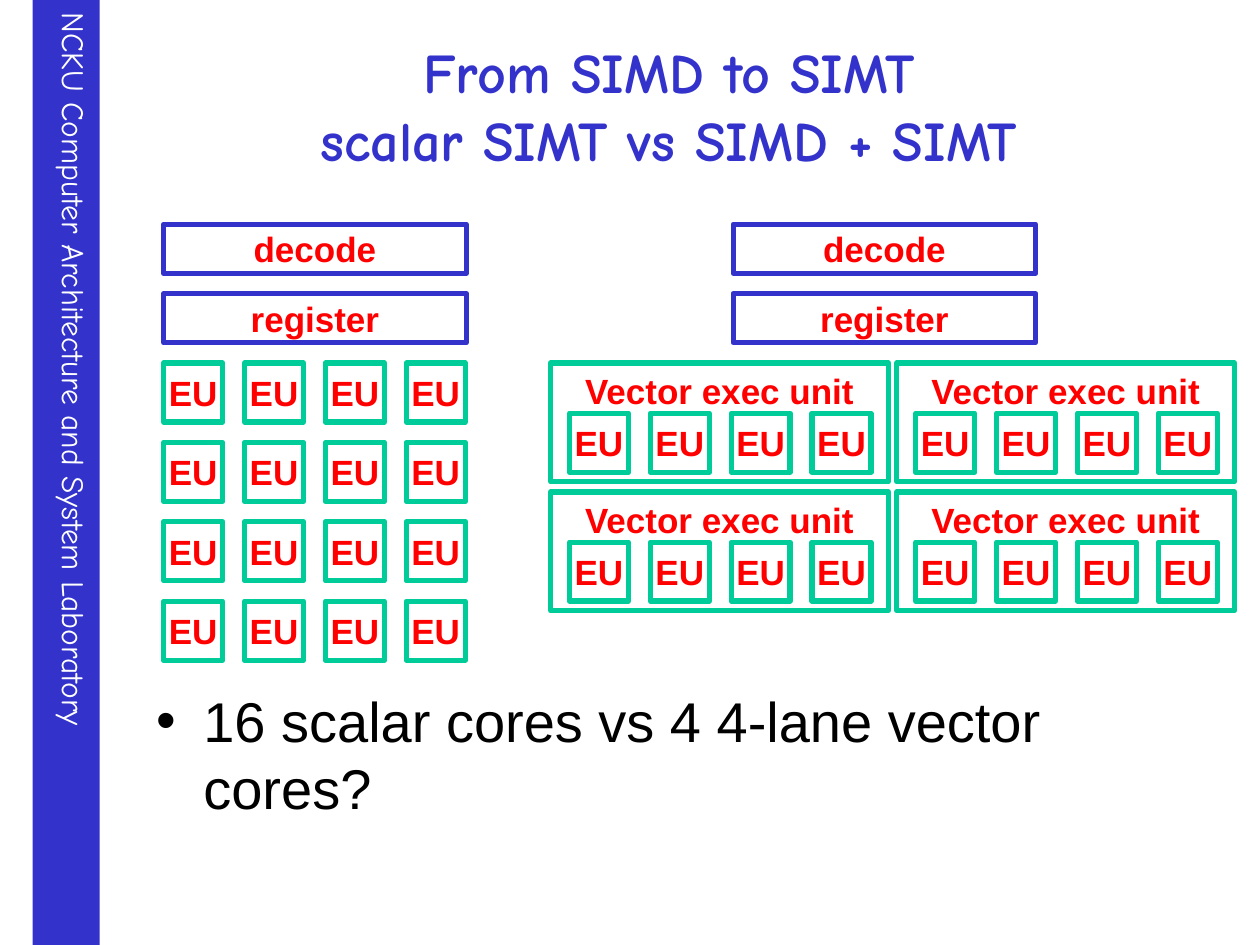
from pptx import Presentation
from pptx.dml.color import RGBColor
from pptx.enum.shapes import MSO_SHAPE
from pptx.enum.text import MSO_ANCHOR, MSO_AUTO_SIZE, PP_ALIGN
from pptx.oxml import parse_xml
from pptx.oxml.ns import nsdecls
from pptx.util import Cm, Pt

COLORS = {"blue": "3333CC", "green": "00CC99", "red": "FF0000",
          "white": "FFFFFF", "black": "000000"}

LAB = "NCKU Computer Architecture and System Laboratory"
TITLE = "From SIMD to SIMT\vscalar SIMT vs SIMD + SIMT"
QUESTION = "16 scalar cores vs 4 4-lane vector cores?"
STAGES = ["decode", "register"]
UNIT, VECTOR = "EU", "Vector exec unit"

# Lengths in cm
STAGE_LEFTS = [3.3, 14.78]
STAGE_TOP, STAGE_PITCH, STAGE_SIZE = 4.52, 1.4, (6.1, 0.99)
UNIT_SIZE, UNIT_PITCH = (1.19, 1.19), (1.63, 1.6)
SCALAR_ORIGIN = (3.3, 7.32)
VECTOR_ORIGIN, VECTOR_PITCH, VECTOR_SIZE = (11.1, 7.32), (6.98, 2.6), (6.81, 2.39)
LANE_OFFSET = (0.38, 1.01)


def rgb(name):
    return RGBColor.from_string(COLORS[name])


def style(p, font, size, color, bold=False):
    for r in p.runs:
        r.font.name, r.font.size, r.font.bold = font, Pt(size), bold
        r.font.color.rgb = rgb(color)


def add_box(slide, text, left, top, size, color, anchor=MSO_ANCHOR.MIDDLE):
    sp = slide.shapes.add_shape(MSO_SHAPE.RECTANGLE, Cm(left), Cm(top),
                                Cm(size[0]), Cm(size[1]))
    sp.shadow.inherit = False
    sp.fill.background()
    sp.line.color.rgb = rgb(color)
    sp.line.width = Pt(3)
    tf = sp.text_frame
    tf.word_wrap = False
    tf.vertical_anchor = anchor
    tf.text = text
    p = tf.paragraphs[0]
    p.alignment = PP_ALIGN.CENTER
    style(p, "Arial", 20, "red", bold=True)


def add_units(slide, left, top, rows):
    for row in range(rows):
        for col in range(4):
            add_box(slide, UNIT, left + col * UNIT_PITCH[0],
                    top + row * UNIT_PITCH[1], UNIT_SIZE, "green")


def add_sidebar(slide):
    sp = slide.shapes.add_shape(MSO_SHAPE.RECTANGLE, Cm(0.66), 0, Cm(1.35), Cm(19.05))
    sp.shadow.inherit = False
    sp.fill.solid()
    sp.fill.fore_color.rgb = rgb("blue")
    sp.line.fill.background()
    tf = sp.text_frame
    tf.text = LAB
    tf.vertical_anchor = MSO_ANCHOR.TOP
    tf._txBody.bodyPr.set("vert", "eaVert")
    p = tf.paragraphs[0]
    p.alignment = PP_ALIGN.LEFT
    style(p, "Comic Neue", 18, "white")


def set_title(slide):
    sp = slide.shapes.title
    sp.left, sp.top, sp.width, sp.height = Cm(2.29), Cm(0.53), Cm(22.4), Cm(3.18)
    tf = sp.text_frame
    tf.auto_size = MSO_AUTO_SIZE.NONE
    tf.vertical_anchor = MSO_ANCHOR.MIDDLE
    p = tf.paragraphs[0]
    p.text = TITLE
    p.alignment = PP_ALIGN.CENTER
    style(p, "Comic Neue", 32, "blue", bold=True)


def add_question(slide):
    sp = slide.shapes.add_textbox(Cm(2.9), Cm(13.72), Cm(20.6), Cm(3.2))
    tf = sp.text_frame
    tf.word_wrap = True
    tf.text = QUESTION
    p = tf.paragraphs[0]
    pPr = p._p.get_or_add_pPr()
    pPr.set("marL", str(Cm(0.95)))
    pPr.set("indent", str(-Cm(0.95)))
    pPr.append(parse_xml(f'<a:buFont {nsdecls("a")} typeface="Arial"/>'))
    pPr.append(parse_xml(f'<a:buChar {nsdecls("a")} char="•"/>'))
    style(p, "Arial", 32, "black")


def main():
    prs = Presentation()
    prs.slide_width, prs.slide_height = Cm(25.4), Cm(19.05)
    slide = prs.slides.add_slide(prs.slide_layouts[5])

    add_sidebar(slide)
    set_title(slide)
    add_question(slide)
    add_units(slide, *SCALAR_ORIGIN, rows=4)

    for left in STAGE_LEFTS:
        for i, stage in enumerate(STAGES):
            add_box(slide, stage, left, STAGE_TOP + i * STAGE_PITCH, STAGE_SIZE, "blue")

    for col in range(2):
        for row in range(2):
            left = VECTOR_ORIGIN[0] + col * VECTOR_PITCH[0]
            top = VECTOR_ORIGIN[1] + row * VECTOR_PITCH[1]
            add_units(slide, left + LANE_OFFSET[0], top + LANE_OFFSET[1], rows=1)
            add_box(slide, VECTOR, left, top, VECTOR_SIZE, "green", MSO_ANCHOR.TOP)

    prs.save("out.pptx")


if __name__ == "__main__":
    main()
